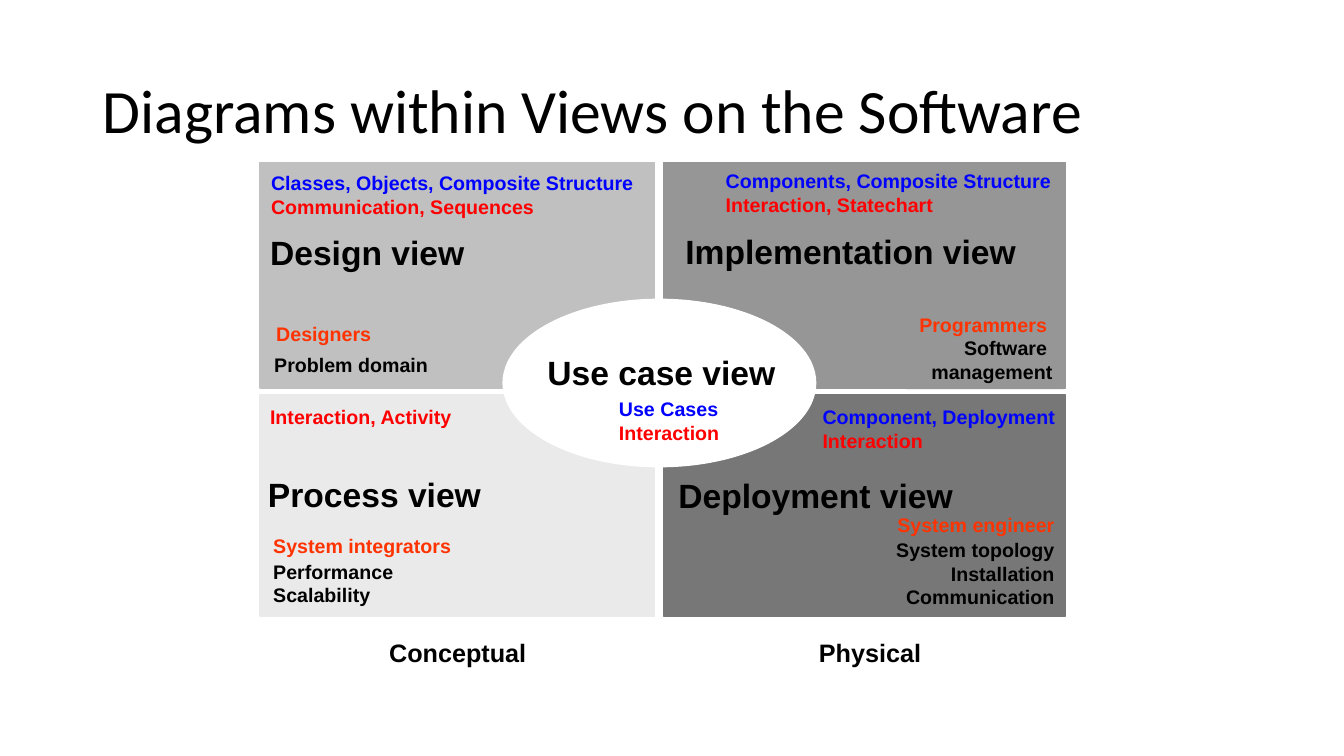
from dataclasses import dataclass
from pptx import Presentation
from pptx.dml.color import RGBColor
from pptx.enum import shapes, text
from pptx.util import Inches, Pt


@dataclass(frozen=True)
class Theme:
    black: str = "000000"
    white: str = "FFFFFF"
    blue: str = "0000FF"
    red: str = "FF0000"
    orange: str = "FF3300"
    design: str = "C0C0C0"
    build: str = "969696"
    process: str = "EAEAEA"
    deploy: str = "777777"
    title: int = 44
    view: int = 24
    axis: int = 18
    small: int = 14


T = Theme()
LEFT, CENTER, RIGHT = text.PP_ALIGN.LEFT, text.PP_ALIGN.CENTER, text.PP_ALIGN.RIGHT
COLS = [(2.58, 3.91), (6.58, 3.99)]
ROWS = [(1.61, 2.24), (3.92, 2.19)]
FILLS = [[T.design, T.build], [T.process, T.deploy]]

VIEWS = [
    ("Design view", (2.58, 2.25, 2.59, 0.51), LEFT),
    ("Implementation view", (6.7, 2.24, 3.63, 0.51), LEFT),
    ("Process view", (2.56, 4.65, 3.54, 0.51), LEFT),
    ("Deployment view", (6.63, 4.66, 3.8, 0.51), LEFT),
    ("Use case view", (5.18, 3.44, 2.76, 0.51), CENTER),
]
DIAGRAMS = [
    ((2.59, 1.65, 3.81, 0.57), [("Classes, Objects, Composite Structure", T.blue),
                                ("Communication, Sequences", T.red)]),
    ((7.1, 1.63, 3.44, 0.57), [("Components, Composite Structure", T.blue),
                               ("Interaction, Statechart", T.red)]),
    ((2.58, 3.97, 2.01, 0.34), [("Interaction, Activity", T.red)]),
    ((8.06, 3.97, 2.52, 0.57), [("Component, Deployment", T.blue),
                                ("Interaction", T.red)]),
    ((6.04, 3.89, 1.2, 0.57), [("Use Cases", T.blue), ("Interaction", T.red)]),
]
ROLES = [
    ((2.63, 3.13, 1.17, 0.35), [("Designers", T.orange)], LEFT, T.design),
    ((2.61, 3.44, 1.76, 0.35), [("Problem domain", T.black)], LEFT, T.design),
    ((8.99, 3.04, 1.56, 0.82), [("Programmers ", T.orange), ("Software ", T.black),
                                ("management", T.black)], RIGHT, T.build),
    ((2.6, 5.49, 1.43, 0.58), [("Performance", T.black),
                               ("Scalability", T.black)], LEFT, None),
    ((2.6, 5.24, 2, 0.35), [("System integrators", T.orange)], LEFT, None),
    ((7.76, 5.28, 2.81, 0.82), [("System topology", T.black), ("Installation", T.black),
                                ("Communication", T.black)], RIGHT, None),
    ((8.76, 5.03, 1.81, 0.35), [("System engineer", T.orange)], RIGHT, None),
]


def paint(fill, color):
    fill.solid()
    fill.fore_color.rgb = RGBColor.from_string(color)


def add_area(slide, kind, box, color):
    area = slide.shapes.add_shape(kind, *map(Inches, box))
    area.shadow.inherit = False
    paint(area.fill, color)
    paint(area.line.fill, color)
    area.line.width = Pt(1)


def add_label(slide, box, lines, size, align=LEFT, inset=(0.1, 0.05),
              wrap=True, grow=True, fill=None, font="Arial", bold=True):
    """Add a text box with one paragraph per (words, color) line."""
    label = slide.shapes.add_textbox(*map(Inches, box))
    if fill:
        paint(label.fill, fill)
    frame = label.text_frame
    frame.word_wrap = wrap
    if grow:
        frame.auto_size = text.MSO_AUTO_SIZE.SHAPE_TO_FIT_TEXT
    frame.margin_left = frame.margin_right = Inches(inset[0])
    frame.margin_top = frame.margin_bottom = Inches(inset[1])
    for i, (words, color) in enumerate(lines):
        para = frame.add_paragraph() if i else frame.paragraphs[0]
        para.alignment = align
        run = para.add_run()
        run.text = words
        run.font.name = font
        run.font.size = Pt(size)
        run.font.bold = bold
        run.font.color.rgb = RGBColor.from_string(color)
    return frame


def add_title(slide, words):
    frame = add_label(slide, (0.92, 0.4, 11.5, 1.45), [(words, T.black)], T.title,
                      grow=False, font="Calibri", bold=False)
    frame.vertical_anchor = text.MSO_ANCHOR.MIDDLE
    frame.paragraphs[0].line_spacing = 0.9


def add_axis(slide, left, words):
    frame = add_label(slide, (left, 6.34, 1.5, 0.51), [(words, T.black)], T.axis,
                      CENTER, inset=(0.04, 0.02), grow=False)
    frame.paragraphs[0].line_spacing = Pt(19)
    frame.paragraphs[0].space_before = Pt(9)


def main():
    deck = Presentation()
    deck.slide_width, deck.slide_height = Inches(13.33), Inches(7.5)
    slide = deck.slides.add_slide(deck.slide_layouts[6])
    add_title(slide, "Diagrams within Views on the Software")
    for (top, height), fills in zip(ROWS, FILLS):
        for (left, width), fill in zip(COLS, fills):
            add_area(slide, shapes.MSO_SHAPE.RECTANGLE, (left, top, width, height), fill)
    for box, lines, align, fill in ROLES:
        add_label(slide, box, lines, T.small, align, inset=(0.11, 0.06),
                  wrap=False, fill=fill)
    add_area(slide, shapes.MSO_SHAPE.OVAL, (4.99, 2.97, 3.1, 1.66), T.white)
    for words, box, align in VIEWS:
        add_label(slide, box, [(words, T.black)], T.view, align)
    for box, lines in DIAGRAMS:
        add_label(slide, box, lines, T.small, wrap=False)
    add_axis(slide, 3.79, "Conceptual")
    add_axis(slide, 7.88, "Physical")
    deck.save("out.pptx")


if __name__ == "__main__":
    main()
